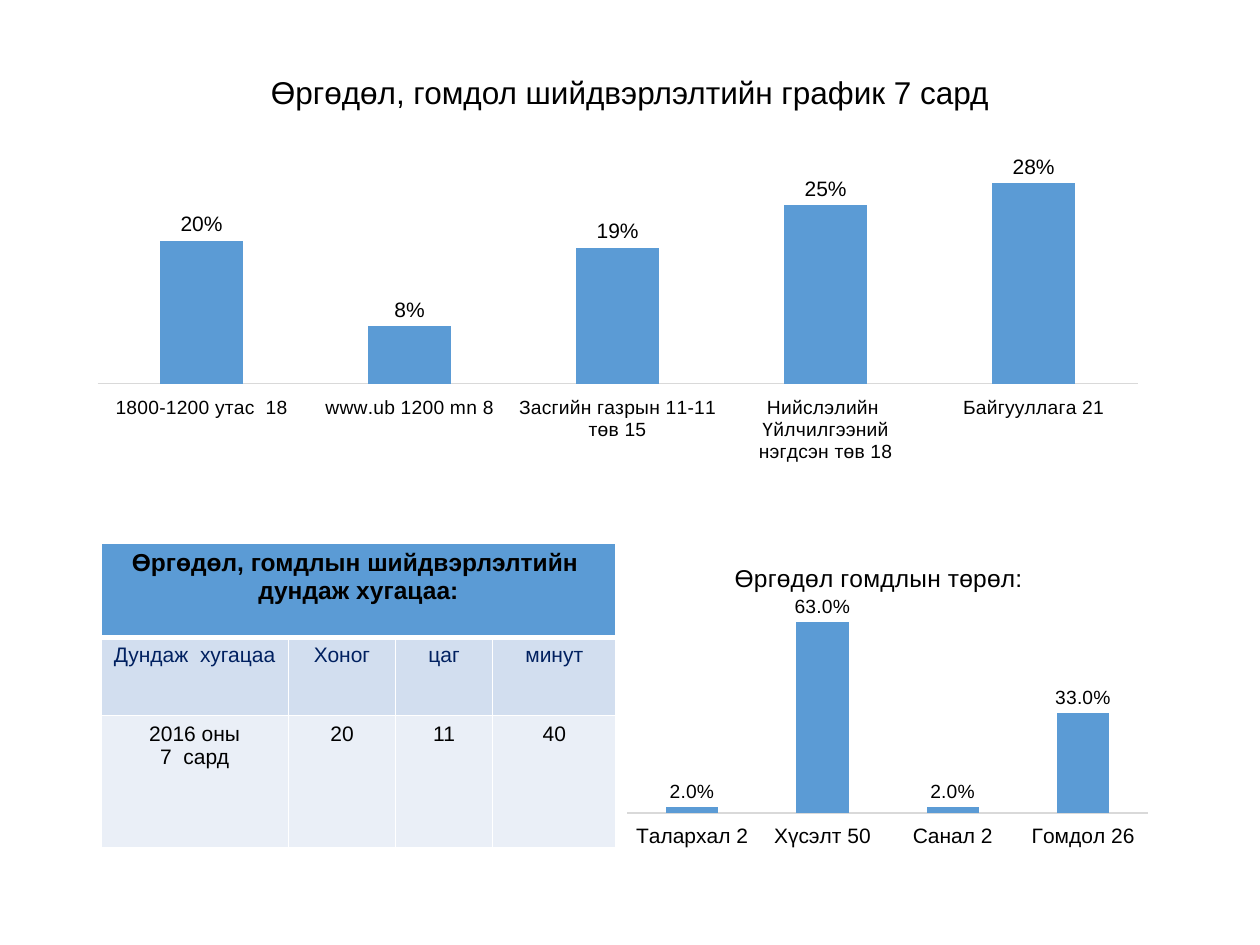
from lxml.etree import SubElement
from pptx import Presentation
from pptx.chart.data import CategoryChartData
from pptx.dml.color import RGBColor
from pptx.enum.chart import XL_CHART_TYPE, XL_LABEL_POSITION, XL_TICK_LABEL_POSITION, XL_TICK_MARK
from pptx.enum.text import MSO_ANCHOR, PP_ALIGN
from pptx.oxml import parse_xml
from pptx.oxml.ns import nsdecls, qn
from pptx.util import Inches, Pt

BLUE, BLACK, NAVY, WHITE, GREY = "5B9BD5", "000000", "002060", "FFFFFF", "D9D9D9"


def rgb(color):
    """Turn a hex string into a colour."""
    return RGBColor.from_string(color)


def style_font(font, size, color=BLACK, bold=False, name="Arial"):
    """Set the face, size and colour of a font."""
    font.name, font.size, font.bold = name, Pt(size), bold
    font.color.rgb = rgb(color)


def add_text(tf, lines, size, color=BLACK, bold=False):
    """Fill a text frame with centred lines."""
    for i, line in enumerate(lines):
        p = tf.paragraphs[0] if i == 0 else tf.add_paragraph()
        p.alignment = PP_ALIGN.CENTER
        r = p.add_run()
        r.text = line
        style_font(r.font, size, color, bold)


def add_title(s, box, text):
    """Place the slide heading in its box."""
    tf = s.shapes.add_textbox(*map(Inches, box)).text_frame
    tf.word_wrap = True
    tf.vertical_anchor = MSO_ANCHOR.MIDDLE
    add_text(tf, [text], 18)
    tf.paragraphs[0].line_spacing = 0.9


def set_borders(cell, top, bottom):
    """Draw white cell borders with the given top and bottom widths."""
    tcPr = cell._tc.get_or_add_tcPr()
    for i, (side, width) in enumerate(zip("LRTB", (1, 1, top, bottom))):
        tcPr.insert(i, parse_xml(
            f'<a:ln{side} {nsdecls("a")} w="{Pt(width)}"><a:solidFill>'
            f'<a:srgbClr val="{WHITE}"/></a:solidFill></a:ln{side}>'))


def add_time_table(s, box):
    """Place the table of average handling time."""
    rows = [
        [["Өргөдөл, гомдлын шийдвэрлэлтийн  дундаж хугацаа:"], [], [], []],
        [["Дундаж  хугацаа"], ["Хоног"], ["цаг"], ["минут"]],
        [["2016 оны", "7  сард"], ["20"], ["11"], ["40"]],
    ]
    looks = [(BLUE, 14, BLACK, True, 1, 3), ("D2DEEF", 12, NAVY, False, 3, 1),
             ("EAEFF7", 12, BLACK, False, 1, 1)]
    table = s.shapes.add_table(3, 4, *map(Inches, box)).table
    for column, width in zip(table.columns, (1.49, 0.85, 0.77, 0.98)):
        column.width = Inches(width)
    for row, height in zip(table.rows, (0.75, 0.62, 1.05)):
        row.height = Inches(height)
    table.cell(0, 0).merge(table.cell(0, 3))
    for row, texts, look in zip(table.rows, rows, looks):
        fill, size, color, bold, top, bottom = look
        for cell, lines in zip(row.cells, texts):
            cell.fill.solid()
            cell.fill.fore_color.rgb = rgb(fill)
            set_borders(cell, top, bottom)
            add_text(cell.text_frame, lines, size, color, bold)


def set_layout(element, **places):
    """Give a chart part a manual place as fractions of the chart."""
    layout = element.find(qn("c:layout"))
    if layout is None:
        layout = parse_xml(f'<c:layout {nsdecls("c")}/>')
        element.insert(0, layout)
    manual = SubElement(layout, qn("c:manualLayout"))
    if "w" in places:
        SubElement(manual, qn("c:layoutTarget")).set("val", "inner")
    for key in "xy":
        SubElement(manual, qn(f"c:{key}Mode")).set("val", "edge")
    for key, value in places.items():
        SubElement(manual, qn(f"c:{key}")).set("val", str(value))


def add_columns(s, box, values, fmt, top, axis_size, label_size, plot, title=None):
    """Place a column chart with labelled bars and no value axis."""
    data = CategoryChartData(number_format=fmt)
    data.categories = values.keys()
    data.add_series("Series 1", values.values())
    chart = s.shapes.add_chart(XL_CHART_TYPE.COLUMN_CLUSTERED, *map(Inches, box), data).chart
    style_font(chart.font, 10, name="Calibri")
    chart.has_legend = False
    chart.has_title = title is not None
    if title:
        add_text(chart.chart_title.text_frame, [title], 14)
        set_layout(chart.chart_title._element, x=0.21, y=0.05)
    axis = chart.category_axis
    axis.major_tick_mark = axis.minor_tick_mark = XL_TICK_MARK.NONE
    axis.tick_label_position = XL_TICK_LABEL_POSITION.LOW
    axis.format.line.color.rgb = rgb(GREY)
    axis.format.line.width = Pt(0.75)
    style_font(axis.tick_labels.font, axis_size)
    value_axis = chart.value_axis
    value_axis.visible = value_axis.has_major_gridlines = False
    value_axis.minimum_scale, value_axis.maximum_scale = 0, top
    bars = chart.plots[0]
    bars.gap_width, bars.overlap, bars.vary_by_categories = 150, -25, False
    bars.series[0].format.fill.solid()
    bars.series[0].format.fill.fore_color.rgb = rgb(BLUE)
    labels = bars.series[0].data_labels
    labels.show_value = True
    labels.number_format, labels.number_format_is_linked = fmt, False
    labels.position = XL_LABEL_POSITION.OUTSIDE_END
    style_font(labels.font, label_size)
    set_layout(chart._chartSpace.chart.plotArea, **dict(zip("xywh", plot)))


def main():
    """Build the slide and save it."""
    prs = Presentation()
    prs.slide_width, prs.slide_height = Inches(10), Inches(7.5)
    s = prs.slides.add_slide(prs.slide_layouts[6])
    add_title(s, (0.69, 0.4, 8.62, 0.69), "Өргөдөл, гомдол шийдвэрлэлтийн график 7 сард")
    add_time_table(s, (0.8, 4.31, 4.09, 2.42))
    kinds = {"Талархал 2": 0.02, "Хүсэлт 50": 0.63, "Санал 2": 0.02, "Гомдол 26": 0.33}
    add_columns(s, (4.89, 4.31, 4.31, 2.42), kinds, "0.0%", 0.7, 12, 11,
                (0.02, 0.19, 0.96, 0.7), "Өргөдөл гомдлын төрөл:")
    channels = {
        "1800-1200 утас  18": 0.2,
        "www.ub 1200 mn 8": 0.08,
        "Засгийн газрын 11-11 төв 15": 0.19,
        "Нийслэлийн  Үйлчилгээний нэгдсэн төв 18": 0.25,
        "Байгууллага 21": 0.28,
    }
    add_columns(s, (0.69, 1.24, 8.51, 2.95), channels, "0%", 0.3, 11, 12,
                (0.01, 0.03, 0.97, 0.58))
    prs.save("out.pptx")


if __name__ == "__main__":
    main()
